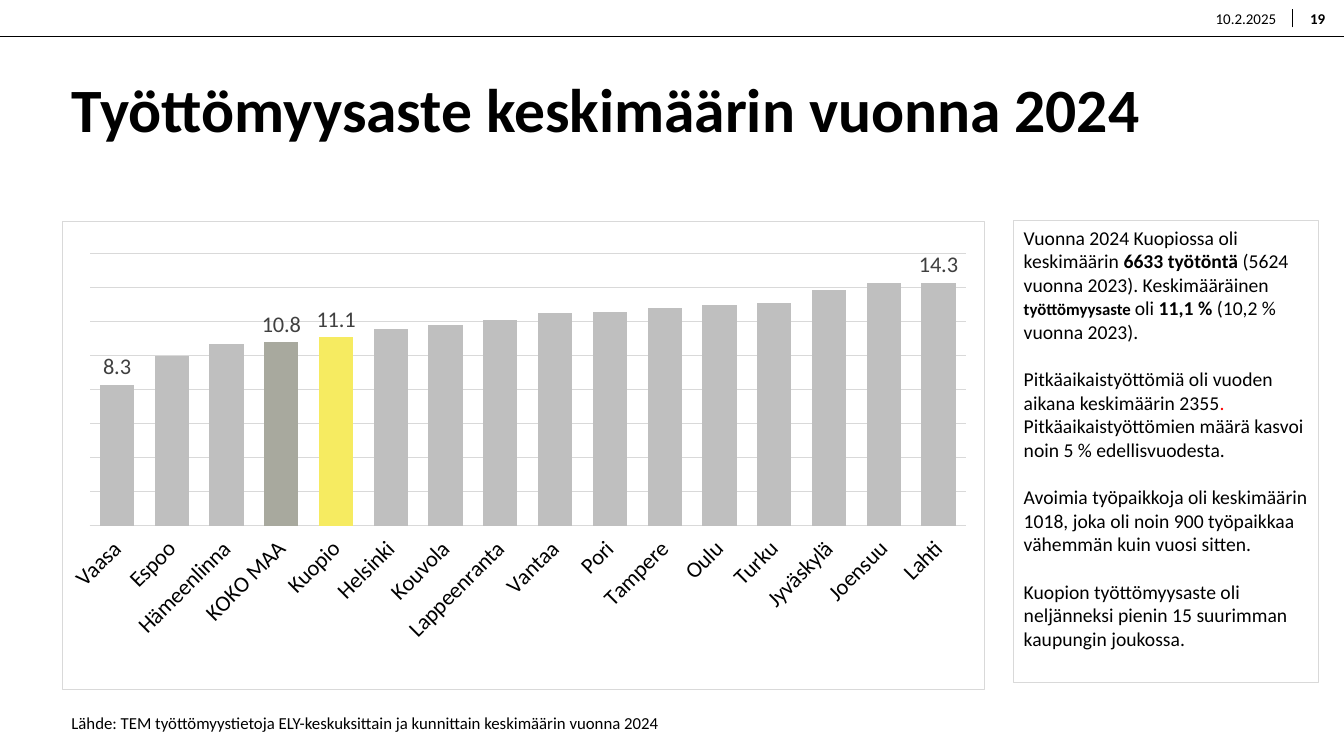
from dataclasses import dataclass

from lxml.etree import SubElement
from pptx import Presentation
from pptx.chart.data import CategoryChartData
from pptx.dml.color import RGBColor
from pptx.enum.chart import XL_CHART_TYPE, XL_LABEL_POSITION, XL_TICK_LABEL_POSITION, XL_TICK_MARK
from pptx.enum.shapes import MSO_CONNECTOR, MSO_SHAPE
from pptx.enum.text import MSO_ANCHOR, MSO_AUTO_SIZE, PP_ALIGN
from pptx.oxml import parse_xml
from pptx.oxml.ns import nsdecls, qn
from pptx.util import Cm, Pt


@dataclass(frozen=True)
class Theme:
    """Colours, font and type sizes of the slide."""
    font: str = "Calibri"
    ink: str = "000000"
    label: str = "404040"
    rule: str = "D9D9D9"
    bar: str = "BFBFBF"
    country: str = "A8A99E"
    city: str = "F6EB61"
    alert: str = "FF0000"
    title: float = 44
    axis: float = 16
    body: float = 14
    small: float = 12
    header: float = 10.7


UNEMPLOYMENT = {
    "Vaasa": 8.3, "Espoo": 10, "Hämeenlinna": 10.7, "KOKO MAA": 10.8,
    "Kuopio": 11.1, "Helsinki": 11.6, "Kouvola": 11.8, "Lappeenranta": 12.1,
    "Vantaa": 12.5, "Pori": 12.6, "Tampere": 12.8, "Oulu": 13,
    "Turku": 13.1, "Jyväskylä": 13.9, "Joensuu": 14.3, "Lahti": 14.3,
}
LABELLED = ("Vaasa", "KOKO MAA", "Kuopio", "Lahti")
BOLD = {"bold": True}


class Deck:
    """Holds the theme and the current slide and draws each kind of element."""

    def __init__(self, prs, theme):
        """Add a title-only slide to the presentation."""
        self.theme = theme
        self.s = prs.slides.add_slide(prs.slide_layouts[5])

    def style(self, font, size, color=None, **extra):
        """Apply the theme font with a size, a colour and other attributes."""
        fmt = {"name": self.theme.font, "size": Pt(size), "bold": False, **extra}
        for name, value in fmt.items():
            setattr(font, name, value)
        font.color.rgb = RGBColor.from_string(color or self.theme.ink)

    def stroke(self, line, color, width):
        """Give a line its colour and width in points."""
        line.color.rgb = RGBColor.from_string(color)
        line.width = Pt(width)

    def fill_text(self, sp, paras, size, align=PP_ALIGN.LEFT, gap=0, spacing=1.0, **frame):
        """Fill a shape with paragraphs of (text, format) runs."""
        tf = sp.text_frame
        fmt = {"word_wrap": True, "auto_size": MSO_AUTO_SIZE.NONE,
               "vertical_anchor": MSO_ANCHOR.TOP, **frame}
        for name, value in fmt.items():
            setattr(tf, name, value)
        for i, runs in enumerate(paras):
            p = tf.add_paragraph() if i else tf.paragraphs[0]
            p.alignment, p.line_spacing = align, spacing
            if i:
                p.space_before = Pt(gap)
            for text, extra in runs:
                r = p.add_run()
                r.text = text
                self.style(r.font, **{"size": size, **extra})

    def title(self, text, box):
        """Place and fill the title placeholder."""
        sp = self.s.shapes.title
        sp.left, sp.top, sp.width, sp.height = map(Cm, box)
        self.fill_text(sp, [[(text, BOLD)]], self.theme.title, spacing=0.9)

    def text(self, paras, box, size, **fmt):
        """Add a text box."""
        sp = self.s.shapes.add_textbox(*map(Cm, box))
        self.fill_text(sp, paras, size, **fmt)

    def header(self, text, left, width, **extra):
        """Add a centred item to the header strip."""
        insets = dict.fromkeys(("margin_left", "margin_top", "margin_right", "margin_bottom"), 0)
        self.text([[(text, extra)]], (left, 0, width, 0.91), self.theme.header,
                  align=PP_ALIGN.CENTER, vertical_anchor=MSO_ANCHOR.MIDDLE, **insets)

    def line(self, *ends):
        """Add a thin straight line."""
        sp = self.s.shapes.add_connector(MSO_CONNECTOR.STRAIGHT, *map(Cm, ends))
        self.stroke(sp.line, self.theme.ink, 0.5)
        SubElement(sp._element.spPr, qn("a:effectLst"))

    def panel(self, paras, box, size, **fmt):
        """Add an outlined box of text."""
        sp = self.s.shapes.add_shape(MSO_SHAPE.RECTANGLE, *map(Cm, box))
        sp.shadow.inherit = False
        sp.fill.background()
        self.stroke(sp.line, self.theme.rule, 0.75)
        self.fill_text(sp, paras, size, **fmt)

    def columns(self, values, box, layout, labelled, highlights):
        """Add a column chart with some bars labelled and highlighted."""
        t = self.theme
        data = CategoryChartData(number_format="0.0")
        data.categories = list(values)
        data.add_series("Series 1", list(values.values()))
        chart = self.s.shapes.add_chart(
            XL_CHART_TYPE.COLUMN_CLUSTERED, *map(Cm, box), data).chart
        chart.has_legend = chart.has_title = False
        self.style(chart.font, t.axis)

        plot = chart.plots[0]
        for name, value in {"gap_width": 60, "overlap": -79, "vary_by_categories": False}.items():
            setattr(plot, name, value)
        series = plot.series[0]
        series.format.fill.solid()
        series.format.fill.fore_color.rgb = RGBColor.from_string(t.bar)
        series.data_labels.show_value = False
        for i, name in enumerate(values):
            if name in highlights:
                fill = series.points[i].format.fill
                fill.solid()
                fill.fore_color.rgb = RGBColor.from_string(highlights[name])
            if name in labelled:
                label = series.points[i].data_label
                self.style(label.font, t.axis, t.label)
                label.position = XL_LABEL_POSITION.OUTSIDE_END

        cat, val = chart.category_axis, chart.value_axis
        cat.major_tick_mark = cat.minor_tick_mark = XL_TICK_MARK.NONE
        cat.tick_label_position = XL_TICK_LABEL_POSITION.LOW
        self.style(cat.tick_labels.font, t.axis)
        cat._element.find(qn("c:txPr")).find(qn("a:bodyPr")).set("rot", "-2700000")
        self.stroke(cat.format.line, t.rule, 0.75)
        scale = {"minimum_scale": 0, "maximum_scale": 16, "major_unit": 2,
                 "has_major_gridlines": True, "visible": False}
        for name, value in scale.items():
            setattr(val, name, value)
        self.stroke(val.major_gridlines.format.line, t.rule, 0.75)
        self.frame_chart(chart, layout)

    def frame_chart(self, chart, layout):
        """Fix the inner plot area and outline the chart."""
        area = chart._chartSpace.chart.plotArea
        for old in area.findall(qn("c:layout")):
            area.remove(old)
        parts = {"layoutTarget": "inner", "xMode": "edge", "yMode": "edge",
                 **dict(zip("xywh", layout))}
        inner = "".join(f'<c:{k} val="{v}"/>' for k, v in parts.items())
        area.insert(0, parse_xml(
            f'<c:layout {nsdecls("c")}><c:manualLayout>{inner}</c:manualLayout></c:layout>'))
        chart._chartSpace.find(qn("c:txPr")).addprevious(parse_xml(
            f'<c:spPr {nsdecls("c", "a")}><a:noFill/><a:ln w="{int(Pt(0.75))}"><a:solidFill>'
            f'<a:srgbClr val="{self.theme.rule}"/></a:solidFill></a:ln></c:spPr>'))


def main():
    """Build the slide and save it."""
    prs = Presentation()
    prs.slide_width, prs.slide_height = Cm(33.87), Cm(19.05)
    t = Theme()
    deck = Deck(prs, t)
    deck.line(0, 0.91, 33.87, 0.91)
    deck.line(32.56, 0.69, 32.56, 0.23)
    deck.title("Työttömyysaste keskimäärin vuonna 2024", (1.55, 1.88, 30.78, 2.72))
    deck.header("10.2.2025", 30.23, 2.34)
    deck.header("19", 32.56, 1.3, **BOLD)
    deck.columns(UNEMPLOYMENT, (1.55, 5.56, 23.27, 11.84), (0.03, 0.07, 0.95, 0.58),
                 LABELLED, {"KOKO MAA": t.country, "Kuopio": t.city})
    deck.panel([
        [("Vuonna 2024 Kuopiossa oli keskimäärin", {}), (" 6633 työtöntä", BOLD),
         (" (5624 vuonna 2023). Keskimääräinen ", {}),
         ("työttömyysaste ", {"size": t.small, **BOLD}), ("oli ", {}),
         ("11,1 %", BOLD), (" (10,2 % vuonna 2023).", {})],
        [("Pitkäaikaistyöttömiä oli vuoden aikana keskimäärin 2355", {}),
         (". ", {"color": t.alert}),
         ("Pitkäaikaistyöttömien määrä kasvoi noin 5 % edellisvuodesta.", {})],
        [("Avoimia työpaikkoja oli keskimäärin 1018, joka oli noin 900 työpaikkaa "
          "vähemmän kuin vuosi sitten.", {})],
        [("Kuopion työttömyysaste oli neljänneksi pienin 15 suurimman kaupungin joukossa.", {})],
    ], (25.55, 5.56, 7.67, 11.63), t.body, gap=17)
    deck.text([[("Lähde: TEM työttömyystietoja ELY-keskuksittain ja kunnittain "
                 "keskimäärin vuonna 2024", {})]], (1.55, 17.83, 24.03, 0.76), t.small)
    prs.save("out.pptx")


if __name__ == "__main__":
    main()
